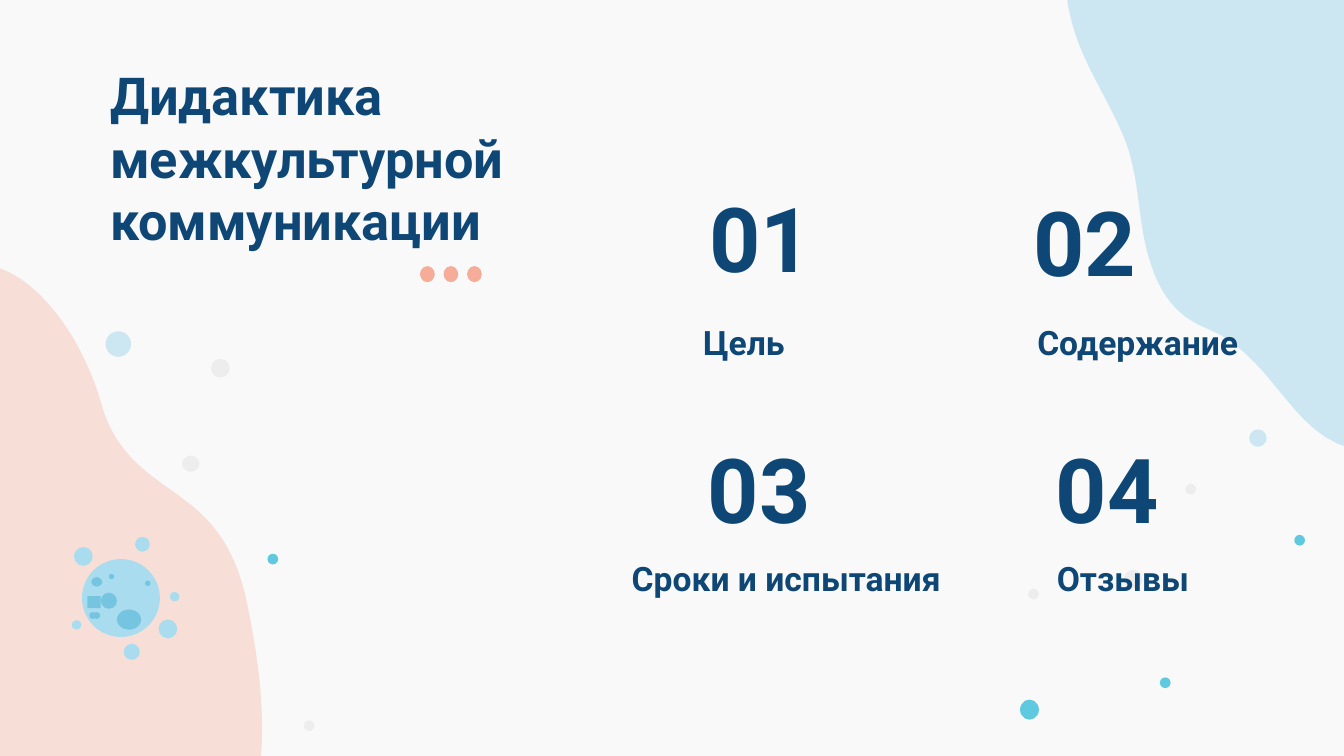
"""Build a contents slide with four numbered sections and soft organic decoration."""
from lxml import etree
from pptx import Presentation
from pptx.dml.color import RGBColor
from pptx.enum.shapes import MSO_SHAPE
from pptx.enum.text import MSO_ANCHOR, MSO_AUTO_SIZE, PP_ALIGN
from pptx.oxml.ns import qn
from pptx.util import Inches, Pt

OVAL, SQUARE = MSO_SHAPE.OVAL, MSO_SHAPE.RECTANGLE
TOP, MIDDLE = MSO_ANCHOR.TOP, MSO_ANCHOR.MIDDLE
LEFT, CENTER = PP_ALIGN.LEFT, PP_ALIGN.CENTER
NO_FIT = MSO_AUTO_SIZE.NONE

WIDTH = 10
HEIGHT = WIDTH * 9 / 16
FONT, NAVY, PAPER = "Roboto", "0E4776", "F9F9F9"
SKY, TEAL, GREY, CORAL = ("AADBEE", 57), ("02ACD0", 62), ("EDEDED", 100), ("F5AD9A", 100)
CELL, SPOT, BLUSH = ("AADCEF", 100), ("75C4E0", 100), ("F5AD9A", 34)
CURVE_STEPS, UNITS_PER_INCH = 16, 1000

TITLE = "Дидактика межкультурной коммуникации"
TITLE_FRAME = (0.72, 0.37, 3.58, 1.59)
NUMBER_SIZE, LABEL_SIZE = (2.06, 0.48), (2.29, 0.27)
WIDE_LABEL_SIZE = (2.72, 0.27)
SECTIONS = [
    ("01", (4.63, 1.52), "Цель", (4.39, 2.41), LABEL_SIZE),
    ("02", (7.04, 1.55), "Содержание", (7.32, 2.41), LABEL_SIZE),
    ("03", (4.62, 3.39), "Сроки и испытания", (4.49, 4.17), WIDE_LABEL_SIZE),
    ("04", (7.21, 3.39), "Отзывы", (7.21, 4.17), LABEL_SIZE),
]

BLOBS = [
    (SKY, (7.96, 0.1), [
        (8.03, 0.47, 8.32, 0.83, 8.41, 1.16), (8.42, 1.2, 8.43, 1.25, 8.44, 1.29),
        (8.47, 1.44, 8.48, 1.6, 8.51, 1.76), (8.57, 2.05, 8.67, 2.32, 8.97, 2.44),
        (9.59, 2.69, 9.62, 3.5, 10.44, 3.34), (11, 3.23, 11.23, 2.33, 11.34, 1.67),
        (11.37, 1.49, 11.37, 1.34, 11.35, 1.21), (11.27, 0.81, 10.97, 0.62, 10.9, 0.22),
        (10.88, 0.13, 10.87, 0.03, 10.88, -0.08), (10.9, -0.26, 10.89, -0.46, 10.86, -0.66),
        (10.79, -1.02, 10.61, -1.35, 10.28, -1.42), (9.04, -1.65, 8.09, -0.67, 7.97, -0.26),
        (7.93, -0.14, 7.93, -0.02, 7.96, 0.1)]),
    (BLUSH, (-1.9, 4.24), [
        (-1.7, 4.56, -1.29, 4.79, -1.09, 5.07), (-1.06, 5.1, -1.04, 5.14, -1.01, 5.17),
        (-0.93, 5.3, -0.85, 5.45, -0.77, 5.59), (-0.61, 5.83, -0.42, 6.04, -0.09, 6.04),
        (0.58, 6.05, 0.9, 6.78, 1.61, 6.33), (2.08, 6.03, 1.97, 5.1, 1.83, 4.45),
        (1.79, 4.27, 1.73, 4.13, 1.66, 4.02), (1.44, 3.67, 1.09, 3.61, 0.87, 3.27),
        (0.82, 3.19, 0.78, 3.1, 0.75, 2.99), (0.7, 2.82, 0.62, 2.63, 0.51, 2.46),
        (0.31, 2.15, 0.03, 1.91, -0.3, 1.97), (-1.55, 2.22, -2.06, 3.48, -2.02, 3.9),
        (-2.01, 4.03, -1.97, 4.14, -1.9, 4.24)]),
]

BUBBLES = [
    (SKY, [(0.88, 2.56, 0.19, 0.19), (9.36, 3.26, 0.13, 0.13)]),
    (TEAL, [(2.03, 4.16, 0.08, 0.08), (8.67, 5.08, 0.08, 0.08),
            (7.66, 5.28, 0.14, 0.15), (9.67, 4.02, 0.08, 0.08)]),
    (GREY, [(1.42, 3.45, 0.13, 0.12), (2.3, 5.4, 0.08, 0.08), (1.64, 2.74, 0.14, 0.14),
            (8.86, 3.64, 0.08, 0.08), (7.69, 4.42, 0.08, 0.08), (8.43, 4.31, 0.14, 0.14)]),
    (CELL, [(0.98, 4.85, 0.12, 0.12), (1.06, 4.05, 0.11, 0.11), (1.25, 4.68, 0.14, 0.14),
            (0.62, 4.14, 0.14, 0.14), (0.57, 4.65, 0.07, 0.07), (1.3, 4.44, 0.07, 0.07),
            (0.9, 4.45, 0.58, 0.58)]),
    (SPOT, [(0.69, 4.58, 0.05, 0.05), (0.72, 4.58, 0.05, 0.05), (0.81, 4.47, 0.12, 0.12),
            (0.96, 4.61, 0.18, 0.15), (0.72, 4.33, 0.08, 0.07), (1.1, 4.34, 0.04, 0.04),
            (0.83, 4.29, 0.04, 0.04)]),
    (CORAL, [(3.18 + 0.35 * place / 2, 2.04, 0.11, 0.12) for place in range(3)]),
]
SQUARE_SPOT = (0.7, 4.48, 0.1, 0.09)


def color(value):
    return RGBColor.from_string(value)


def paint(shape, tint):
    value, opacity = tint
    shape.shadow.inherit = False
    shape.line.fill.background()
    shape.fill.solid()
    shape.fill.fore_color.rgb = color(value)
    if opacity < 100:
        swatch = shape.element.spPr.find(qn("a:solidFill"))[0]
        etree.SubElement(swatch, qn("a:alpha")).set("val", str(opacity * 1000))


def add_spot(page, kind, frame, tint):
    across, down, width, height = frame
    corner = across - width / 2, down - height / 2
    shape = page.shapes.add_shape(kind, *map(Inches, (*corner, width, height)))
    paint(shape, tint)


def add_blob(page, tint, start, curves):
    points, current = [start], start
    for curve in curves:
        knots = [current, curve[:2], curve[2:4], curve[4:]]
        for step in range(1, CURVE_STEPS + 1):
            t = step / CURVE_STEPS
            weights = ((1 - t) ** 3, 3 * t * (1 - t) ** 2, 3 * t ** 2 * (1 - t), t ** 3)
            points.append([sum(weight * knot[axis] for weight, knot in zip(weights, knots))
                           for axis in (0, 1)])
        current = curve[4:]
    grid = [(round(x * UNITS_PER_INCH), round(y * UNITS_PER_INCH)) for x, y in points]
    builder = page.shapes.build_freeform(*grid[0], scale=Inches(1) / UNITS_PER_INCH)
    builder.add_line_segments(grid[1:], close=True)
    paint(builder.convert_to_shape(), tint)


def write(box, text, size, anchor, align):
    frame = box.text_frame
    frame.word_wrap, frame.auto_size = True, NO_FIT
    frame.vertical_anchor = anchor
    frame.margin_left = frame.margin_right = Inches(0.1)
    frame.margin_top = frame.margin_bottom = Inches(0.1)
    para = frame.paragraphs[0]
    para.alignment = align
    span = para.add_run()
    span.text = text
    span.font.name, span.font.size, span.font.bold = FONT, Pt(size), True
    span.font.color.rgb = color(NAVY)


def main():
    deck = Presentation()
    deck.slide_width, deck.slide_height = Inches(WIDTH), Inches(HEIGHT)
    page = deck.slides.add_slide(deck.slide_layouts[5])
    page.background.fill.solid()
    page.background.fill.fore_color.rgb = color(PAPER)

    for blob in BLOBS:
        add_blob(page, *blob)
    for tint, frames in BUBBLES:
        for frame in frames:
            add_spot(page, OVAL, frame, tint)
    add_spot(page, SQUARE, SQUARE_SPOT, SPOT)

    title = page.shapes.title
    title.left, title.top, title.width, title.height = map(Inches, TITLE_FRAME)
    write(title, TITLE, 28, TOP, LEFT)
    for number, number_at, label, label_at, label_size in SECTIONS:
        for text, corner, extent, size in ((label, label_at, label_size, 18),
                                           (number, number_at, NUMBER_SIZE, 48)):
            box = page.shapes.add_textbox(*map(Inches, corner + extent))
            write(box, text, size, MIDDLE, CENTER)
    deck.save("out.pptx")


if __name__ == "__main__":
    main()
